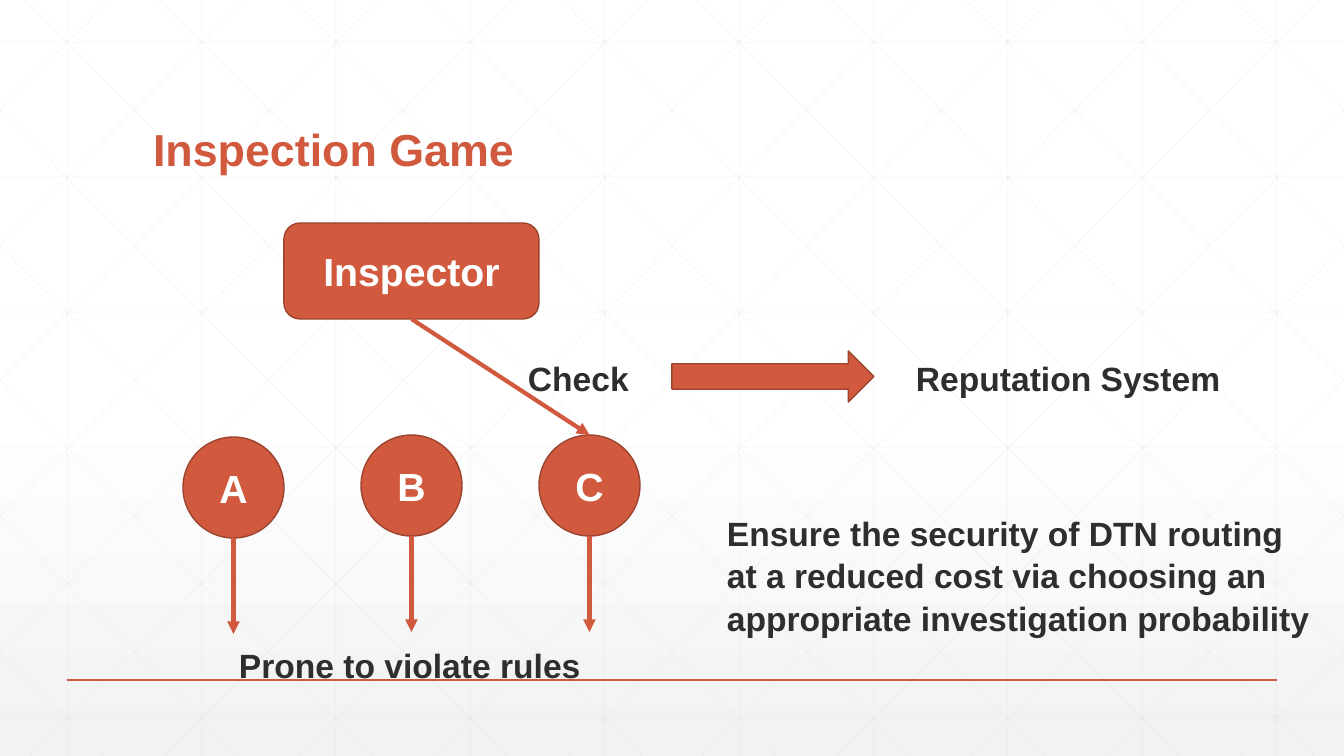
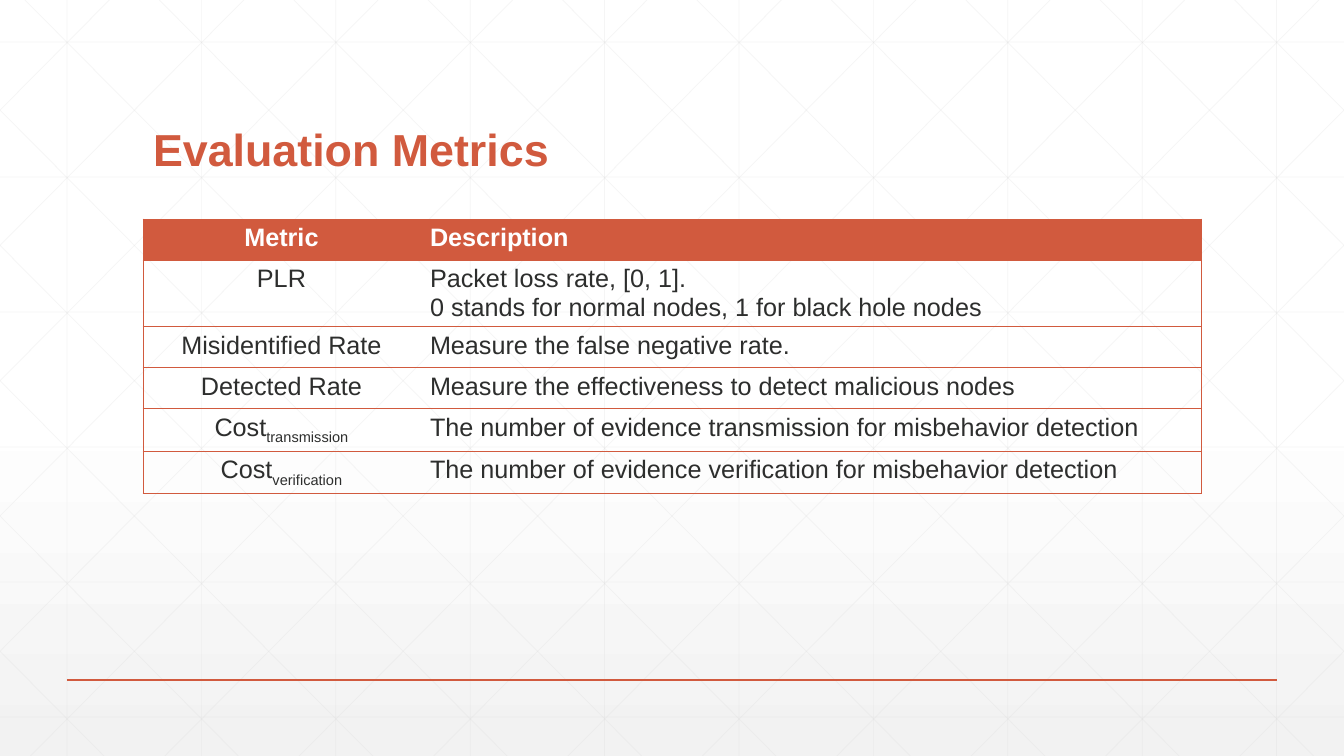
from lxml import etree
from pptx import Presentation
from pptx import util as u
from pptx.dml.color import RGBColor
from pptx.enum import shapes, text
from pptx.oxml.ns import qn

PX = 914400 / 100.8
WIDTH, HEIGHT = 1344, 756
FONT = "Arial"
ACCENT = RGBColor(0xD1, 0x5A, 0x3E)
OUTLINE = RGBColor(0x9B, 0x43, 0x2E)
INK = RGBColor(0x2D, 0x2E, 0x2D)
WHITE = RGBColor(0xFF, 0xFF, 0xFF)
PALE = RGBColor(0xF2, 0xF2, 0xF2)
GRID = RGBColor(0xD9, 0xD9, 0xD9)

METRICS = [
    ("Metric", ["Description"]),
    ("PLR", ["Packet loss rate, [0, 1].",
             "0 stands for normal nodes, 1 for black hole nodes"]),
    ("Misidentified Rate", ["Measure the false negative rate."]),
    ("Detected Rate", ["Measure the effectiveness to detect malicious nodes"]),
    (("Cost", "transmission"),
     ["The number of evidence transmission for misbehavior detection"]),
    (("Cost", "verification"),
     ["The number of evidence verification for misbehavior detection"]),
]


def px(*lengths):
    """Turn px lengths into EMU."""
    return [u.Emu(round(length * PX)) for length in lengths]


def write(frame, paragraphs, size=18, color=INK, bold=False,
          align=text.PP_ALIGN.LEFT, spacing=None):
    """Fill a text frame; a (text, subscript) pair makes two runs."""
    for index, content in enumerate(paragraphs):
        paragraph = frame.add_paragraph() if index else frame.paragraphs[0]
        paragraph.alignment = align
        paragraph.line_spacing = spacing
        parts = (content,) if isinstance(content, str) else content
        for position, part in enumerate(parts):
            run = paragraph.add_run()
            run.text = part
            run.font.name, run.font.size = FONT, u.Pt(size)
            run.font.bold, run.font.color.rgb = bold, color
            if position:
                run._r.get_or_add_rPr().set("baseline", "-25000")


def set_borders(cell, sides):
    """Draw the given sides (out of L, R, T, B) and clear the others."""
    properties = cell._tc.get_or_add_tcPr()
    for side in "LRTB":
        line = etree.SubElement(properties, qn(f"a:ln{side}"), w=str(u.Pt(0.5)))
        if side in sides:
            fill = etree.SubElement(line, qn("a:solidFill"))
            etree.SubElement(fill, qn("a:srgbClr"), val=str(ACCENT))
        else:
            etree.SubElement(line, qn("a:noFill"))


def diagonal(top):
    """Ends of a falling line that starts at x = top, cut at the slide edges."""
    run = 751
    slope = HEIGHT / run
    left, right = max(top, 0), min(top + run, WIDTH)
    return left, (left - top) * slope, right, (right - top) * slope


class Deck:
    def __init__(self):
        self.presentation = Presentation()
        self.presentation.slide_width, self.presentation.slide_height = px(WIDTH, HEIGHT)
        self.layout = self.presentation.slide_layouts[5]
        self.slide = None

    def add_slide(self, title):
        first = self.slide is None
        self.slide = self.presentation.slides.add_slide(self.layout)
        if first:
            self.build_backdrop()
        shape = self.slide.shapes.title
        shape.left, shape.top, shape.width, shape.height = px(143, 55, 1058, 126)
        frame = shape.text_frame
        frame.vertical_anchor = text.MSO_ANCHOR.BOTTOM
        frame.auto_size = text.MSO_AUTO_SIZE.NONE
        write(frame, [title], size=32, color=ACCENT, bold=True, spacing=0.9)

    def build_backdrop(self):
        """Give the layout its gradient, lattice and bottom rule."""
        fill = self.layout.background.fill
        fill.gradient()
        fill.gradient_angle = 270
        for stop, color, position in zip(fill.gradient_stops, (WHITE, PALE), (0.53, 1)):
            stop.color.rgb, stop.position = color, position

        pitch = WIDTH / 10
        lattice = [(67 + pitch * i, 0, 67 + pitch * i, HEIGHT) for i in range(10)]
        lattice += [(0, 42 + 135 * i, WIDTH, 42 + 135 * i) for i in range(6)]
        for i in range(-5, 10):
            x1, y1, x2, y2 = diagonal(25 + pitch * i)
            lattice += [(x1, y1, x2, y2), (WIDTH - x1, y1, WIDTH - x2, y2)]
        lines = [self.line(*ends, color=GRID, width=0.5, alpha=25) for ends in lattice]
        lines.append(self.line(67, 680, 1277, 680, width=1))
        # Connectors can only be made on a slide, so they are moved to the layout.
        tree = self.layout.shapes.element
        for index, line in enumerate(lines):
            line.element.nvCxnSpPr.cNvPr.set("id", str(100 + index))
            tree.insert(2 + index, line.element)

    def line(self, x1, y1, x2, y2, color=ACCENT, width=3, alpha=None, arrow=False):
        connector = self.slide.shapes.add_connector(
            shapes.MSO_CONNECTOR.STRAIGHT, *px(x1, y1, x2, y2))
        connector.line.color.rgb, connector.line.width = color, u.Pt(width)
        properties = connector.element.spPr
        outline = properties.get_or_add_ln()
        if alpha:
            tint = outline.find(".//" + qn("a:srgbClr"))
            etree.SubElement(tint, qn("a:alpha"), val=str(alpha * 1000))
        if arrow:
            etree.SubElement(outline, qn("a:tailEnd"), type="triangle")
        etree.SubElement(properties, qn("a:effectLst"))
        return connector

    def shape(self, kind, left, top, width, height, label=None):
        shape = self.slide.shapes.add_shape(kind, *px(left, top, width, height))
        shape.shadow.inherit = False
        shape.fill.solid()
        shape.fill.fore_color.rgb = ACCENT
        shape.line.color.rgb, shape.line.width = OUTLINE, u.Pt(1)
        if label:
            shape.text_frame.vertical_anchor = text.MSO_ANCHOR.MIDDLE
            write(shape.text_frame, [label], size=28, color=WHITE, bold=True,
                  align=text.PP_ALIGN.CENTER)
        return shape

    def label(self, left, top, width, height, *paragraphs):
        box = self.slide.shapes.add_textbox(*px(left, top, width, height))
        box.text_frame.word_wrap = False
        box.text_frame.auto_size = text.MSO_AUTO_SIZE.SHAPE_TO_FIT_TEXT
        write(box.text_frame, paragraphs, size=24, bold=True, spacing=1.05)

    def table(self, left, top, widths, row_height, rows):
        """Table with a filled header, horizontal rules and an outer frame."""
        table = self.slide.shapes.add_table(
            len(rows), len(widths),
            *px(left, top, sum(widths), row_height * len(rows))).table
        table.first_row = table.horz_banding = False
        for column, width in zip(table.columns, px(*widths)):
            column.width = width
        for row_index, (metric, description) in enumerate(rows):
            header = row_index == 0
            columns = (([metric], "LTB", text.PP_ALIGN.CENTER),
                       (description, "RTB", text.PP_ALIGN.LEFT))
            for column_index, (paragraphs, sides, align) in enumerate(columns):
                cell = table.cell(row_index, column_index)
                set_borders(cell, sides)
                if header:
                    cell.fill.solid()
                    cell.fill.fore_color.rgb = ACCENT
                else:
                    cell.fill.background()
                write(cell.text_frame, paragraphs, color=WHITE if header else INK,
                      bold=header, align=align)


def build_inspection_game(deck):
    deck.add_slide("Inspection Game")
    inspector = deck.shape(shapes.MSO_SHAPE.ROUNDED_RECTANGLE, 284, 223, 255, 96, "Inspector")
    diameter = 101
    for index, (name, top) in enumerate((("A", 437), ("B", 435), ("C", 435))):
        left = 183 + 178 * index
        node = deck.shape(shapes.MSO_SHAPE.OVAL, left, top, diameter, diameter, name)
        center, bottom = left + diameter / 2, top + diameter
        deck.line(center, bottom, center, bottom + 96, arrow=True)
    deck.label(229, 638, 365, 50, "Prone to violate rules")
    check = deck.line(412, 319, 590, 435, arrow=True)
    check.begin_connect(inspector, 2)
    check.end_connect(node, 0)
    deck.label(518, 351, 122, 50, "Check")
    deck.shape(shapes.MSO_SHAPE.RIGHT_ARROW, 672, 351, 202, 51)
    deck.label(906, 351, 328, 50, "Reputation System")
    deck.label(717, 506, 608, 132, "Ensure the security of DTN routing",
               "at a reduced cost via choosing an",
               "appropriate investigation probability")


def build_evaluation_metrics(deck):
    deck.add_slide("Evaluation Metrics")
    deck.table(143, 219, (277, 781), 41, METRICS)


def main():
    deck = Deck()
    build_inspection_game(deck)
    build_evaluation_metrics(deck)
    deck.presentation.save("out.pptx")


if __name__ == "__main__":
    main()
